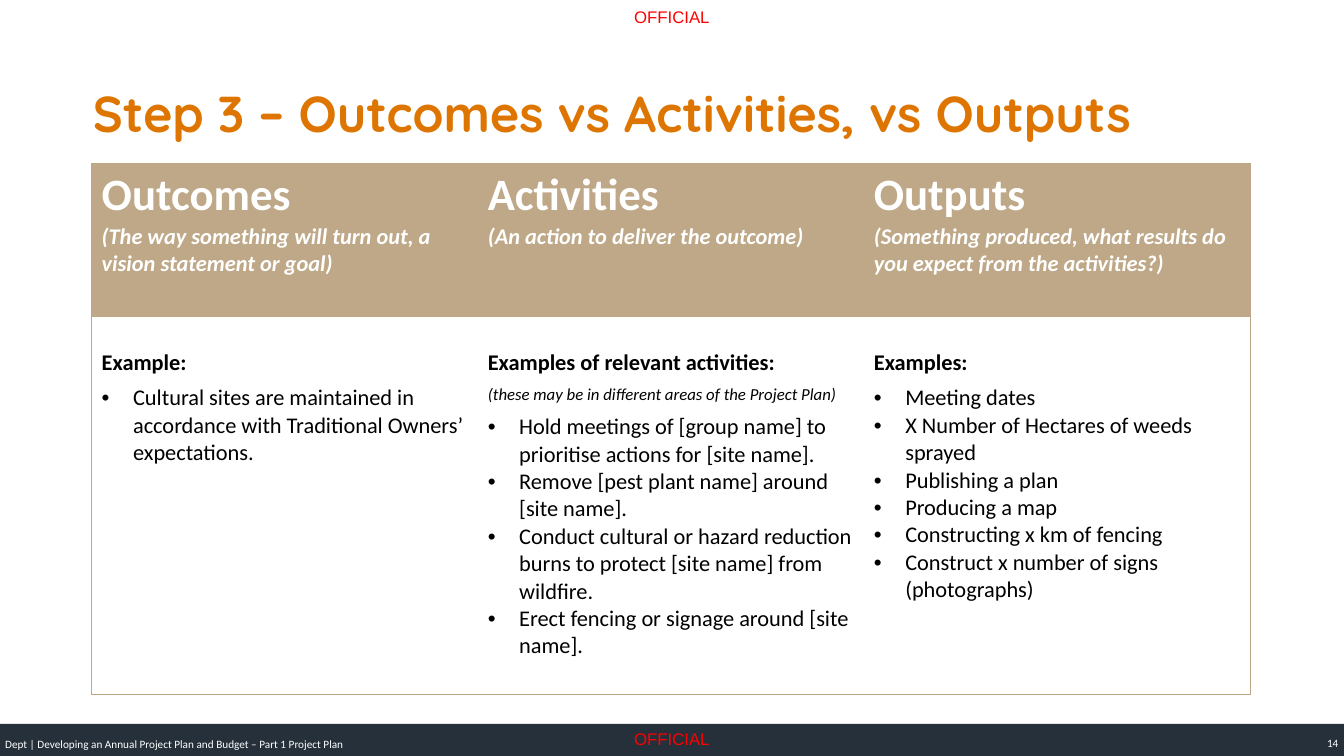
from lxml.etree import SubElement
from pptx import Presentation
from pptx.dml.color import RGBColor
from pptx.enum.shapes import MSO_SHAPE
from pptx.enum.text import MSO_ANCHOR, PP_ALIGN
from pptx.oxml import parse_xml
from pptx.oxml.ns import nsdecls, qn
from pptx.util import Cm, Pt

ORANGE = RGBColor(0xDD, 0x75, 0x00)
SAND = RGBColor(0xBE, 0xA8, 0x87)
NAVY = RGBColor(0x25, 0x30, 0x3B)
RED = RGBColor(0xFF, 0x00, 0x00)
WHITE = RGBColor(0xFF, 0xFF, 0xFF)
BLACK = RGBColor(0x00, 0x00, 0x00)

TITLE = "Step 3 – Outcomes vs Activities, vs Outputs"
MARKING = "OFFICIAL"
FOOTER = "Dept | Developing an Annual Project Plan and Budget – Part 1 Project Plan"
PAGE_NUMBER = "14"
COLUMNS = [
    {
        "heading": "Outcomes",
        "meaning": "(The way something will turn out, a vision statement or goal)",
        "label": "Example:",
        "note": None,
        "examples": [
            "Cultural sites are maintained in accordance with Traditional Owners’ expectations.",
        ],
    },
    {
        "heading": "Activities",
        "meaning": "(An action to deliver the outcome)",
        "label": "Examples of relevant activities:",
        "note": "(these may be in different areas of the Project Plan)",
        "examples": [
            "Hold meetings of [group name] to prioritise actions for [site name].",
            "Remove [pest plant name] around [site name].",
            "Conduct cultural or hazard reduction burns to protect [site name] from wildfire.",
            "Erect fencing or signage around [site name].",
        ],
    },
    {
        "heading": "Outputs",
        "meaning": "(Something produced, what results do you expect from the activities?)",
        "label": "Examples:",
        "note": None,
        "examples": [
            "Meeting dates",
            "X Number of Hectares of weeds sprayed",
            "Publishing a plan",
            "Producing a map",
            "Constructing x km of fencing",
            "Construct x number of signs (photographs)",
        ],
    },
]

SLIDE_WIDTH, SLIDE_HEIGHT = Cm(33.87), Cm(19.05)
FOOTER_TOP = Cm(18.24)
TABLE_LEFT, TABLE_TOP = Cm(2.31), Cm(4.11)
COLUMN_WIDTH = Cm(9.73)
ROW_HEIGHTS = [Cm(3.86), Cm(9.53)]
BULLET_INDENT = Cm(0.79)


def write(frame, text, size=16, color=BLACK, font="Calibri", bold=False, italic=False,
          align=PP_ALIGN.LEFT, line_spacing=None, space_after=None, bullet=False):
    first = frame.paragraphs[0]
    paragraph = frame.add_paragraph() if first.runs else first
    paragraph.alignment = align
    if line_spacing:
        paragraph.line_spacing = line_spacing
    if space_after:
        paragraph.space_after = Pt(space_after)
    if bullet:
        properties = paragraph._p.get_or_add_pPr()
        properties.set("marL", str(BULLET_INDENT))
        properties.set("indent", str(-BULLET_INDENT))
        SubElement(properties, qn("a:buFont")).set("typeface", "Arial")
        SubElement(properties, qn("a:buChar")).set("char", "•")
    run = paragraph.add_run()
    run.text = text
    run.font.name = font
    run.font.size = Pt(size)
    run.font.bold = bold
    run.font.italic = italic
    run.font.color.rgb = color


def add_text_box(slide, left, top, width, height, text, anchor=MSO_ANCHOR.TOP, margin=0, **text_format):
    frame = slide.shapes.add_textbox(left, top, width, height).text_frame
    frame.word_wrap = True
    frame.vertical_anchor = anchor
    frame.margin_left = frame.margin_right = margin
    frame.margin_top = frame.margin_bottom = 0
    write(frame, text, **text_format)


def set_borders(cell, visible):
    properties = cell._tc.get_or_add_tcPr()
    for position, side in enumerate("LRTB"):
        if side in visible:
            paint = f'<a:solidFill><a:srgbClr val="{SAND}"/></a:solidFill>'
        else:
            paint = "<a:noFill/>"
        line = parse_xml(f'<a:ln{side} {nsdecls("a")} w="{Pt(0.5)}">{paint}</a:ln{side}>')
        properties.insert(position, line)


def add_comparison_table(slide):
    count = len(COLUMNS)
    table = slide.shapes.add_table(
        2, count, TABLE_LEFT, TABLE_TOP, COLUMN_WIDTH * count, sum(ROW_HEIGHTS)
    ).table
    table.first_row = False
    table.horz_banding = False
    for row, height in zip(table.rows, ROW_HEIGHTS):
        row.height = height

    for index, content in enumerate(COLUMNS):
        table.columns[index].width = COLUMN_WIDTH
        outer = ("L" if index == 0 else "") + ("R" if index == count - 1 else "")
        header, body = table.cell(0, index), table.cell(1, index)
        for cell, fill, sides in ((header, SAND, "T"), (body, WHITE, "TB")):
            cell.fill.solid()
            cell.fill.fore_color.rgb = fill
            set_borders(cell, sides + outer)

        write(header.text_frame, content["heading"], size=32, color=WHITE, bold=True)
        write(header.text_frame, content["meaning"], color=WHITE, bold=True, italic=True)
        write(body.text_frame, content["label"], bold=True, line_spacing=2.0, space_after=6)
        if content["note"]:
            write(body.text_frame, content["note"], size=12, italic=True, space_after=6)
        for example in content["examples"]:
            write(body.text_frame, example, bullet=True)


def main():
    presentation = Presentation()
    presentation.slide_width, presentation.slide_height = SLIDE_WIDTH, SLIDE_HEIGHT
    slide = presentation.slides.add_slide(presentation.slide_layouts[6])

    footer_bar = slide.shapes.add_shape(
        MSO_SHAPE.RECTANGLE, 0, FOOTER_TOP, SLIDE_WIDTH, SLIDE_HEIGHT - FOOTER_TOP
    )
    footer_bar.shadow.inherit = False
    footer_bar.fill.solid()
    footer_bar.fill.fore_color.rgb = NAVY
    footer_bar.line.fill.background()

    for top in (Cm(0.18), Cm(18.36)):
        add_text_box(slide, Cm(15.98), top, Cm(2.03), Cm(0.51), MARKING,
                     size=12, font="Arial", color=RED)
    add_text_box(slide, Cm(2.34), Cm(2.21), Cm(29.18), Cm(1.4), TITLE, anchor=MSO_ANCHOR.BOTTOM,
                 size=36, font="Quicksand", color=ORANGE, bold=True, line_spacing=0.9)
    add_text_box(slide, 0, Cm(18.39), Cm(28.58), Cm(0.71), FOOTER, anchor=MSO_ANCHOR.MIDDLE,
                 margin=Cm(0.13), size=8, color=WHITE)
    add_text_box(slide, Cm(31.5), Cm(18.36), Cm(2.23), Cm(0.71), PAGE_NUMBER,
                 anchor=MSO_ANCHOR.MIDDLE, size=8, color=WHITE, align=PP_ALIGN.RIGHT)
    add_comparison_table(slide)

    presentation.save("out.pptx")


if __name__ == "__main__":
    main()
